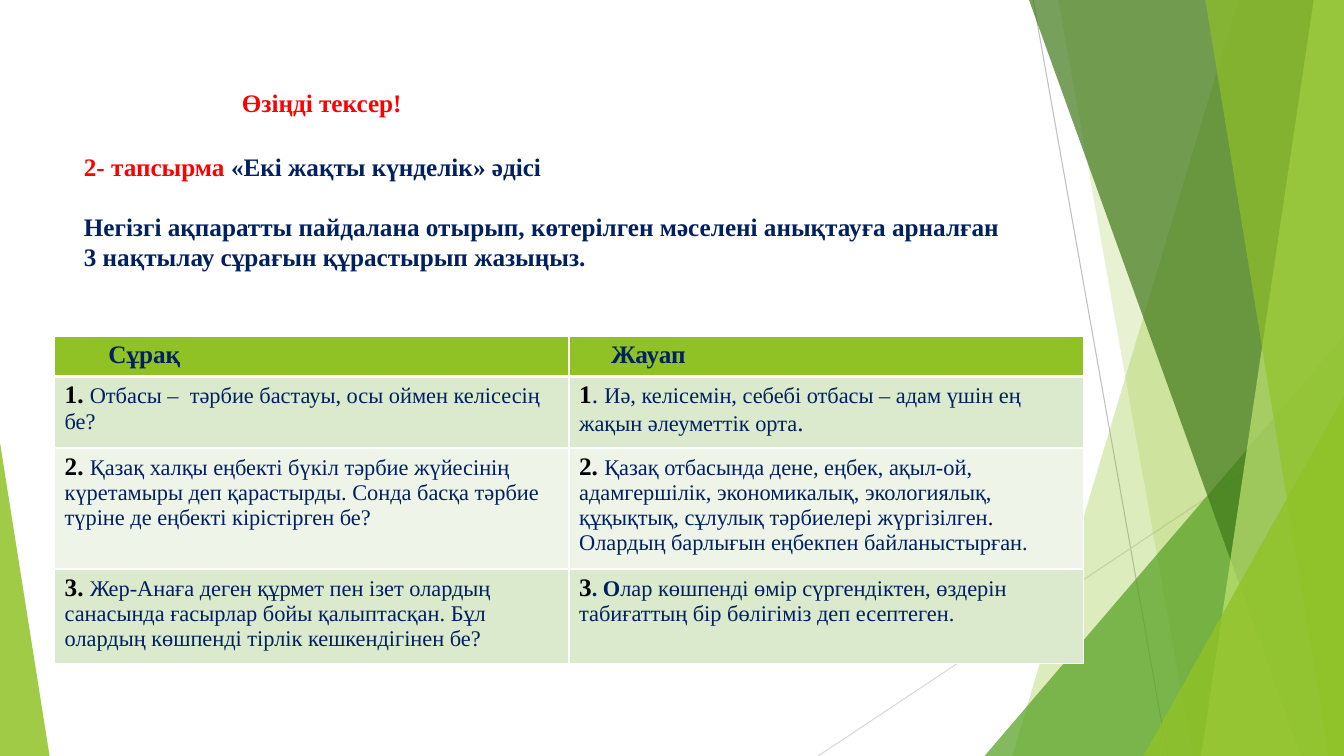
import pptx
import pptx.dml.color
import pptx.enum.shapes
import pptx.enum.text
import pptx.oxml
import pptx.oxml.ns
import pptx.util

RGB = pptx.dml.color.RGBColor
WHITE = RGB(0xFF, 0xFF, 0xFF)
BLACK = RGB(0x00, 0x00, 0x00)
RED = RGB(0xFF, 0x00, 0x00)
NAVY = RGB(0x00, 0x20, 0x60)
LIME = RGB(0x90, 0xC2, 0x26)
PALE_LIME = RGB(0xC0, 0xE4, 0x74)
GREEN = RGB(0x54, 0xA0, 0x21)
DARK_GREEN = RGB(0x3F, 0x78, 0x19)
ROW_ODD = RGB(0xDB, 0xE9, 0xCD)
ROW_EVEN = RGB(0xEE, 0xF4, 0xE8)
GREY = RGB(0xBF, 0xBF, 0xBF)
LIGHT_GREY = RGB(0xD9, 0xD9, 0xD9)

FONT = "Times New Roman"
COLS, ROWS = 16, 9
SLIDE_W, SLIDE_H = pptx.util.Inches(13.333), pptx.util.Inches(7.5)

# Run styles: size, colour, bold
ALERT = (18, RED, True)
HEAD = (18, NAVY, True)
MARK = (18, BLACK, True)
BODY = (16, NAVY, False)
BODY_BOLD = (16, NAVY, True)
BODY_BLACK = (16, BLACK, False)
BODY_BIG = (18, NAVY, False)

TASK = [
    [("2- тапсырма ", ALERT), ("«Екі жақты күнделік» әдісі", HEAD)],
    [("Негізгі ақпаратты пайдалана отырып, көтерілген мәселені анықтауға арналған", HEAD)],
    [("3 нақтылау сұрағын құрастырып жазыңыз.", HEAD)],
]
DIARY = [
    [[("Сұрақ", HEAD)], [("Жауап", HEAD)]],
    [[("1. ", MARK), ("Отбасы –  тәрбие бастауы, осы оймен келісесің бе?", BODY)],
     [("1", MARK), (". ", BODY_BIG),
      ("Иә, келісемін, себебі отбасы – адам үшін ең жақын әлеуметтік орта", BODY),
      (".", BODY_BIG)]],
    [[("2. ", MARK),
      ("Қазақ халқы еңбекті бүкіл тәрбие жүйесінің күретамыры деп қарастырды. "
       "Сонда басқа тәрбие түріне де еңбекті кірістірген бе?", BODY)],
     [("2. ", MARK),
      ("Қазақ отбасында дене, еңбек, ақыл-ой, адамгершілік, экономикалық, "
       "экологиялық, құқықтық, сұлулық тәрбиелері жүргізілген", BODY),
      (". ", BODY_BLACK), ("Олардың барлығын еңбекпен байланыстырған.", BODY)]],
    [[("3. ", MARK),
      ("Жер-Анаға деген құрмет пен ізет олардың санасында ғасырлар бойы қалыптасқан. "
       "Бұл олардың көшпенді тірлік кешкендігінен бе?", BODY)],
     [("3", MARK), (". О", BODY_BOLD),
      ("лар көшпенді өмір сүргендіктен, өздерін табиғаттың бір бөлігіміз деп есептеген.",
       BODY)]],
]
ROW_SHARES = [0.12, 0.22, 0.37, 0.29]
ROW_FILLS = [LIME, ROW_ODD, ROW_EVEN, ROW_ODD]
HEADER_INDENTS = [0.64, 0.5]


def col(n):
    return round(SLIDE_W * n / COLS)


def row(n):
    return round(SLIDE_H * n / ROWS)


def place(box):
    x, y, w, h = box
    return col(x), row(y), col(w), row(h)


def add_runs(p, runs):
    for text, (size, color, bold) in runs:
        r = p.add_run()
        r.text = text
        r.font.name = FONT
        r.font.size = pptx.util.Pt(size)
        r.font.bold = bold
        r.font.color.rgb = color


def paint(sp, color, alpha):
    """Fill with a colour at alpha percent opacity, without line or shadow."""
    sp.shadow.inherit = False
    sp.line.fill.background()
    sp.fill.solid()
    sp.fill.fore_color.rgb = color
    clr = sp.fill._xPr.find(".//" + pptx.oxml.ns.qn("a:srgbClr"))
    clr.append(pptx.oxml.parse_xml(
        f'<a:alpha {pptx.oxml.ns.nsdecls("a")} val="{alpha * 1000}"/>'))


def add_triangle(slide, box, apex, color, alpha):
    sp = slide.shapes.add_shape(
        pptx.enum.shapes.MSO_SHAPE.ISOSCELES_TRIANGLE, *place(box))
    sp.adjustments[0] = apex
    paint(sp, color, alpha)


def add_facets(slide, box):
    """Overlapping green bands along the right edge of the box."""
    x, y, w, h = box
    lines = [((3.3, 0), (4.9, h), GREY), ((w, 4.84), (0.74, h), LIGHT_GREY)]
    for (x1, y1), (x2, y2), color in lines:
        cn = slide.shapes.add_connector(
            pptx.enum.shapes.MSO_CONNECTOR.STRAIGHT,
            col(x + x1), row(y + y1), col(x + x2), row(y + y2))
        cn.line.color.rgb = color
        cn.line.width = pptx.util.Pt(0.75)
        cn._element.spPr.append(pptx.oxml.parse_xml(
            f'<a:effectLst {pptx.oxml.ns.nsdecls("a")}/>'))

    def band(top_x, bottom_x, color, alpha):
        fb = slide.shapes.build_freeform(col(x + top_x), row(y))
        fb.add_line_segments([(col(x + w), row(y)), (col(x + w), row(y + h)),
                              (col(x + bottom_x), row(y + h))])
        paint(fb.convert_to_shape(), color, alpha)

    def corner(left, top, color, alpha):
        add_triangle(slide, (x + left, y + top, w - left, h - top), 1, color, alpha)

    band(5.74, 3.05, LIME, 30)
    band(3.6, 5.2, LIME, 20)
    corner(2.72, 4, GREEN, 72)
    band(3.25, 6.49, DARK_GREEN, 70)
    band(6.64, 5.3, PALE_LIME, 70)
    band(5.35, 6.82, LIME, 65)
    corner(4.61, 4.72, LIME, 80)


def add_title(slide, box):
    sp = slide.shapes.title
    sp.left, sp.top, sp.width, sp.height = place(box)
    tf = sp.text_frame
    tf.word_wrap = False
    tf.auto_size = pptx.enum.text.MSO_AUTO_SIZE.NONE
    tf.vertical_anchor = pptx.enum.text.MSO_ANCHOR.TOP
    p = tf.paragraphs[0]
    p.alignment = pptx.enum.text.PP_ALIGN.LEFT
    add_runs(p, [("Өзіңді тексер!", ALERT)])


def add_task(slide, box):
    tf = slide.shapes.add_textbox(*place(box)).text_frame
    tf.word_wrap = True
    for i, runs in enumerate(TASK):
        p = tf.add_paragraph() if i else tf.paragraphs[0]
        add_runs(p, runs)
    tf.paragraphs[1].space_before = pptx.util.Pt(21.5)


def add_borders(cell, widths):
    """White borders; widths in points, keyed by side letter."""
    tc_pr = cell._tc.get_or_add_tcPr()
    for side, width in widths.items():
        tc_pr.append(pptx.oxml.parse_xml(
            f'<a:ln{side} {pptx.oxml.ns.nsdecls("a")} w="{pptx.util.Pt(width)}">'
            f'<a:solidFill><a:srgbClr val="{WHITE}"/></a:solidFill></a:ln{side}>'))


def add_diary(slide, box):
    """Two-sided diary table of questions and answers."""
    x, y, w, h = place(box)
    table = slide.shapes.add_table(len(DIARY), len(DIARY[0]), x, y, w, h).table
    for column in table.columns:
        column.width = w // len(DIARY[0])
    for i, cells in enumerate(DIARY):
        table.rows[i].height = round(h * ROW_SHARES[i])
        for j, runs in enumerate(cells):
            cell = table.cell(i, j)
            add_borders(cell, {"L": 1, "R": 1, "T": 3 if i == 1 else 1,
                               "B": 3 if i == 0 else 1})
            cell.fill.solid()
            cell.fill.fore_color.rgb = ROW_FILLS[i]
            if i == 0:
                cell.margin_left = col(HEADER_INDENTS[j])
            add_runs(cell.text_frame.paragraphs[0], runs)


def main():
    prs = pptx.Presentation()
    prs.slide_width, prs.slide_height = SLIDE_W, SLIDE_H
    slide = prs.slides.add_slide(prs.slide_layouts[5])
    add_facets(slide, (9, 0, 7, 9))
    add_triangle(slide, (0, 5.27, 0.59, 3.73), 0, LIME, 85)
    add_title(slide, (2.76, 0.98, 2.16, 0.48))
    add_task(slide, (0.88, 1.74, 12.01, 1.57))
    add_diary(slide, (0.65, 4, 12.25, 3.88))
    prs.save("out.pptx")


if __name__ == "__main__":
    main()
